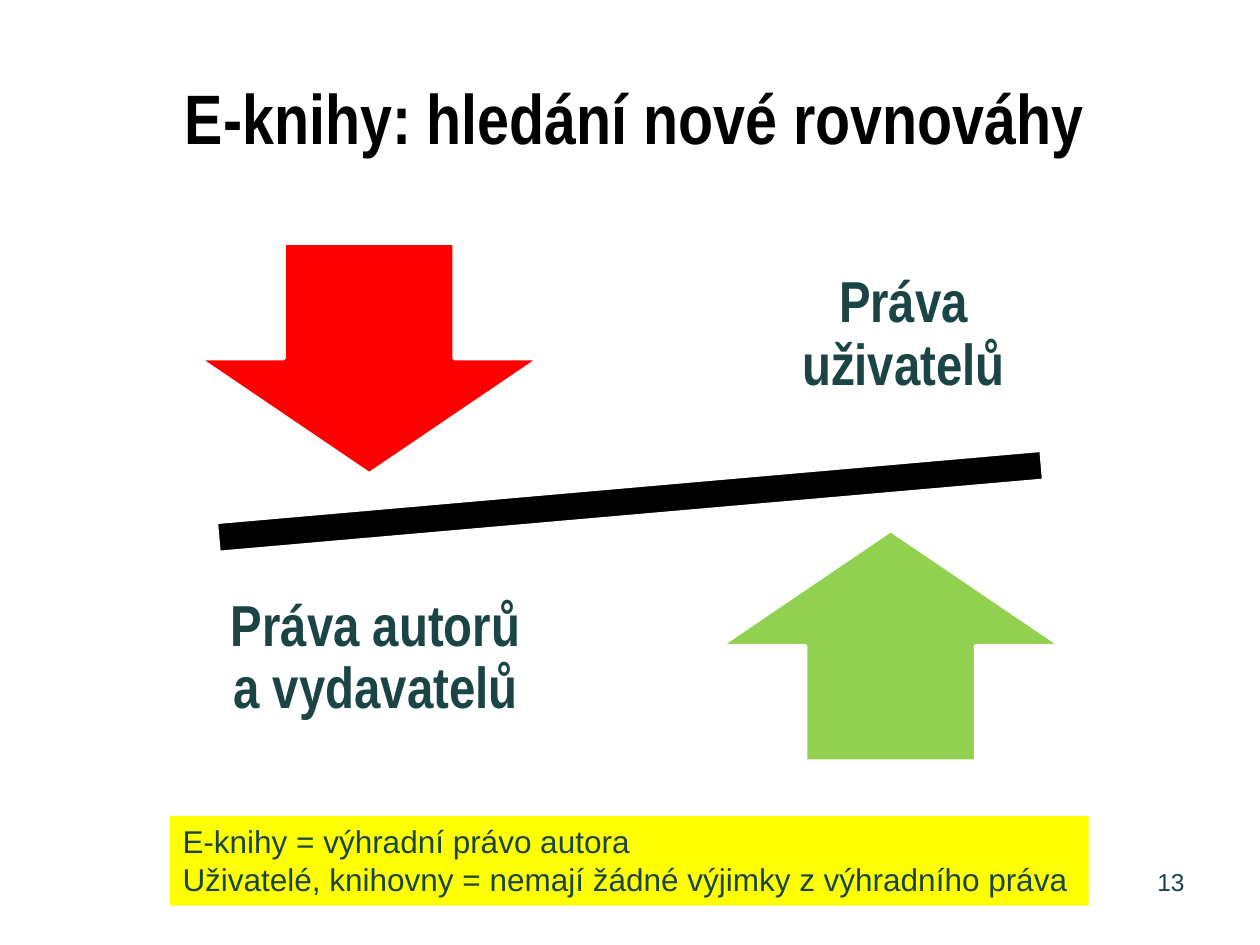
"""Build the slide on e-books and the balance of rights."""
from pptx import Presentation
from pptx.dml.color import RGBColor
from pptx.enum import shapes, text
from pptx.util import Pt

COLORS = {"title": "000000", "text": "1B4445", "beam": "000000", "down": "FF0000",
          "up": "92D050", "note": "FFFF00", "outline": "FFFFFF"}
SHAPE = shapes.MSO_SHAPE
ALIGN = text.PP_ALIGN
ANCHOR = text.MSO_ANCHOR


def write(shape, lines, size, font, color, bold, align, frame_format, spacing=1.0):
    frame = shape.text_frame
    for name, value in frame_format.items():
        setattr(frame, name, value)
    frame.text = "\n".join(lines)
    for paragraph in frame.paragraphs:
        paragraph.alignment = align
        paragraph.line_spacing = spacing
        for name, value in {"size": Pt(size), "name": font, "bold": bold}.items():
            setattr(paragraph.runs[0].font, name, value)
        paragraph.runs[0].font.color.rgb = RGBColor.from_string(COLORS[color])


def add_filled(slide, kind, box, color):
    shape = slide.shapes.add_shape(kind, *map(Pt, box))
    shape.shadow.inherit = False
    shape.fill.solid()
    shape.fill.fore_color.rgb = RGBColor.from_string(COLORS[color])
    return shape


presentation = Presentation()
presentation.slide_width, presentation.slide_height = Pt(720), Pt(540)
slide = presentation.slides.add_slide(presentation.slide_layouts[6])

title = slide.shapes.add_textbox(Pt(19.4), Pt(21.6), Pt(686.2), Pt(90))
write(title, ["E-knihy: hledání nové rovnováhy"], 40, "Arial Narrow", "title", True,
      ALIGN.CENTER, {"word_wrap": True, "vertical_anchor": ANCHOR.MIDDLE})

number = slide.shapes.add_textbox(Pt(516.2), Pt(491.8), Pt(167.8), Pt(37.4))
write(number, ["13"], 14, "Arial", "text", False, ALIGN.RIGHT, {"word_wrap": True})

balance = [
    (SHAPE.MATH_MINUS, (38.2, 249.8, 643.7, 73.4), "beam", -5),
    (SHAPE.DOWN_ARROW, (113.8, 139, 194.4, 131.8), "down", 0),
    (SHAPE.UP_ARROW, (411.8, 303.1, 194.4, 131.8), "up", 0),
]
for kind, box, color, rotation in balance:
    shape = add_filled(slide, kind, box, color)
    shape.rotation = rotation
    shape.line.color.rgb = RGBColor.from_string(COLORS["outline"])
    shape.line.width = Pt(2)

label_format = {"word_wrap": True, "vertical_anchor": ANCHOR.MIDDLE}
label_format.update({f"margin_{side}": Pt(18.7) for side in ("left", "top", "right", "bottom")})
for left, top, label in [(412.6, 122.4, "Práva uživatelů"),
                         (110.9, 307.4, "Práva autorů a vydavatelů")]:
    box = slide.shapes.add_textbox(Pt(left), Pt(top), Pt(207.4), Pt(138.2))
    write(box, [label], 33, "Arial Narrow", "text", True, ALIGN.CENTER, label_format, 0.9)

note = add_filled(slide, SHAPE.RECTANGLE, (97.2, 466.4, 524.9, 51.1), "note")
note.line.fill.background()
write(note, ["E-knihy = výhradní právo autora",
             "Uživatelé, knihovny = nemají žádné výjimky z výhradního práva"],
      18, "Arial", "text", False, ALIGN.LEFT,
      {"word_wrap": False, "vertical_anchor": ANCHOR.TOP,
       "auto_size": text.MSO_AUTO_SIZE.SHAPE_TO_FIT_TEXT})

presentation.save("out.pptx")
